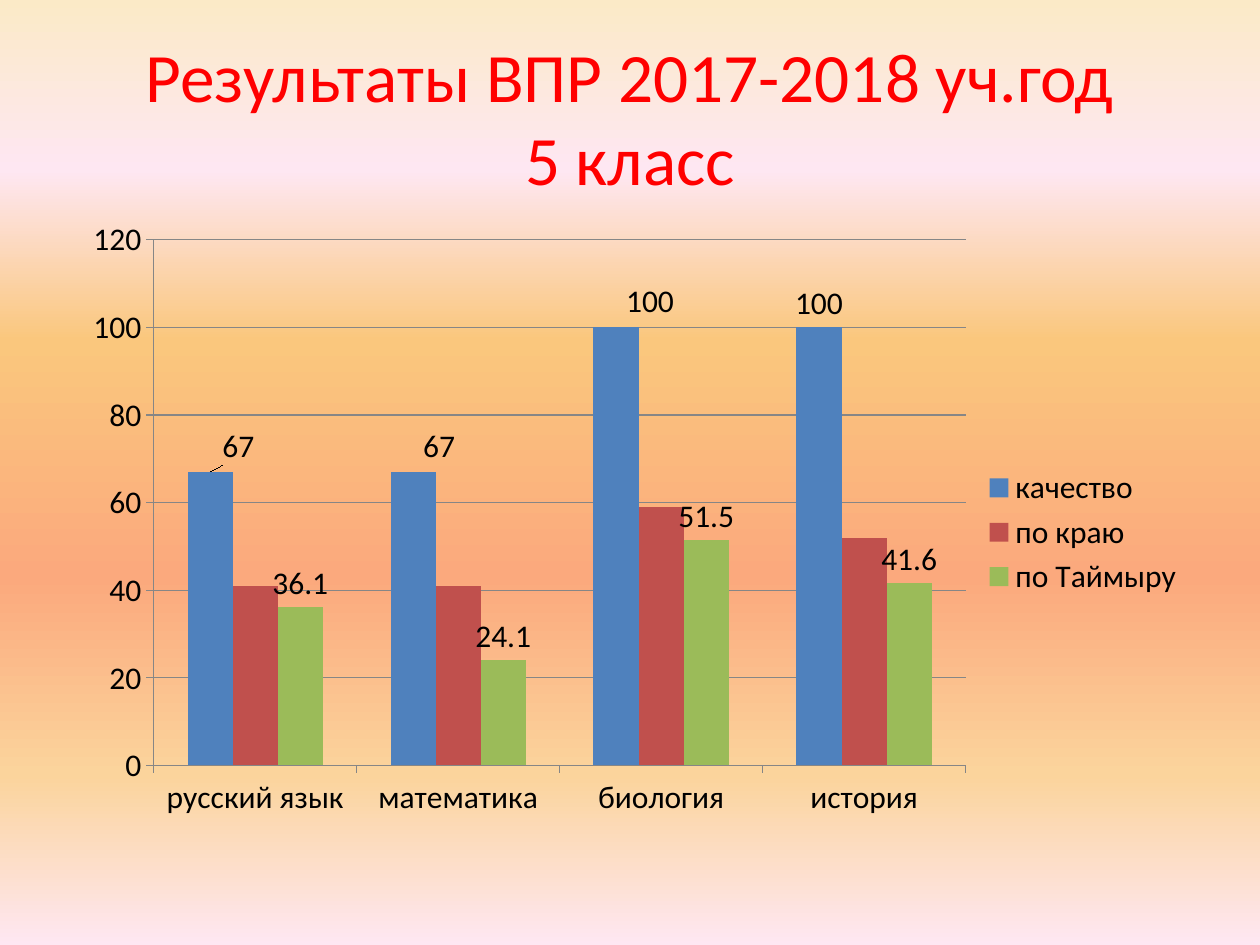
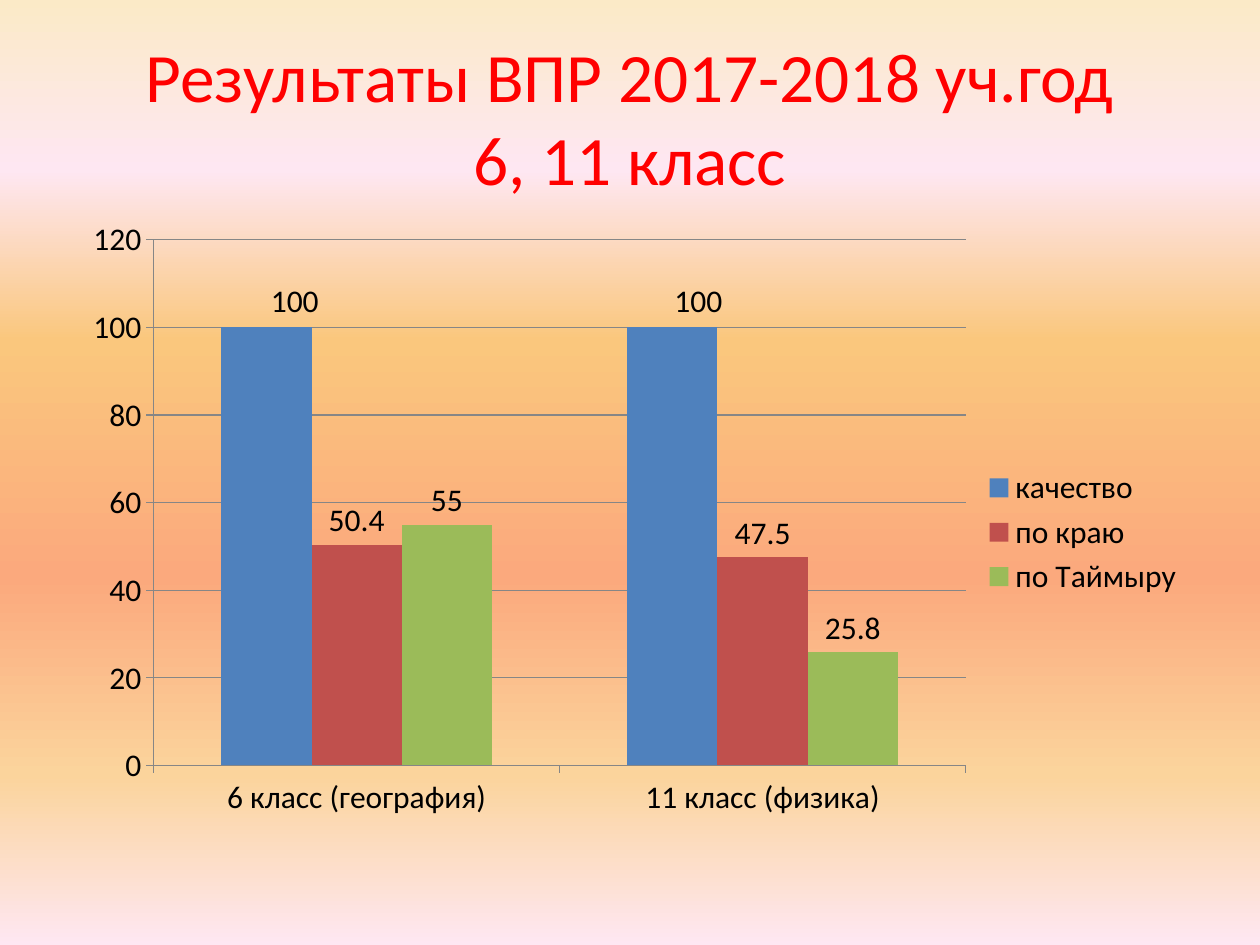
from copy import deepcopy

from lxml.etree import SubElement
from pptx import Presentation
from pptx.chart.data import CategoryChartData
from pptx.dml.color import RGBColor
from pptx.enum.chart import XL_CHART_TYPE as ChartType
from pptx.enum.chart import XL_LABEL_POSITION as LabelPos
from pptx.enum.chart import XL_LEGEND_POSITION as LegendPos
from pptx.enum.chart import XL_TICK_MARK as TickMark
from pptx.enum.text import MSO_ANCHOR, PP_ALIGN
from pptx.oxml.ns import qn
from pptx.util import Inches, Pt

FONT = "Calibri"
COLORS = {
    "title": "FF0000",
    "text": "000000",
    "line": "868686",
    "качество": "4F81BD",
    "по краю": "C0504D",
    "по Таймыру": "9BBB59",
}
SKY = [(0, "FBEAC7"), (18, "FEE7F2"), (36, "FAC77D"),
       (61, "FBA97D"), (82, "FBD49C"), (100, "FEE7F2")]
WIDTH, HEIGHT = Inches(10), Inches(7.5)
TITLE_BOX = (0.05, 0.04, 0.9, 1 / 6)
CHART_BOX = (0.05, 0.7 / 3, 0.9, 0.66)
PLOT_AREA = {"x": 0.08, "y": 0.031, "w": 0.716, "h": 0.843}
LABEL_LIFT = -0.003


def rgb(name):
    return RGBColor.from_string(COLORS[name])


def place(box):
    """Turn shares of the slide into left, top, width, height."""
    return [round(share * side) for share, side in zip(box, (WIDTH, HEIGHT) * 2)]


def set_background(master):
    fill = master.background.fill
    fill.gradient()
    fill.gradient_angle = 270
    stops = master.element.find(".//" + qn("a:gsLst"))
    for _ in range(len(SKY) - len(stops)):
        stops.append(deepcopy(stops[0]))
    for stop, (percent, color) in zip(fill.gradient_stops, SKY):
        stop.position = percent / 100
        stop.color.rgb = RGBColor.from_string(color)


def add_title(s, lines):
    title = s.shapes.title
    title.left, title.top, title.width, title.height = place(TITLE_BOX)
    tf = title.text_frame
    tf.vertical_anchor = MSO_ANCHOR.MIDDLE
    p = tf.paragraphs[0]
    p.alignment = PP_ALIGN.CENTER
    for i, line in enumerate(lines):
        if i:
            p.add_line_break()
        r = p.add_run()
        r.text = line
        r.font.name, r.font.size = FONT, Pt(39.6)
        r.font.color.rgb = rgb("title")


def fill_layout(layout, **settings):
    """Write a manual chart layout: one child element per setting."""
    manual = SubElement(layout, qn("c:manualLayout"))
    for tag, value in settings.items():
        SubElement(manual, qn("c:" + tag)).set("val", str(value))


def fix_plot_area(chart):
    area = chart.element.find(".//" + qn("c:plotArea"))
    layout = area.find(qn("c:layout"))
    if layout is None:
        layout = SubElement(area, qn("c:layout"))
        area.insert(0, layout)
    fill_layout(layout, layoutTarget="inner", xMode="edge", yMode="edge", **PLOT_AREA)


def style_axes(chart):
    for axis in (chart.category_axis, chart.value_axis):
        axis.major_tick_mark = TickMark.OUTSIDE
        axis.minor_tick_mark = TickMark.NONE
        axis.format.line.color.rgb = rgb("line")
        axis.format.line.width = Pt(0.75)
    axis = chart.value_axis
    axis.minimum_scale, axis.maximum_scale, axis.major_unit = 0, 120, 20
    axis.has_major_gridlines = True
    grid = axis.major_gridlines.format.line
    grid.color.rgb, grid.width = rgb("line"), Pt(0.75)


def set_font(font):
    font.name, font.size = FONT, Pt(18)
    font.color.rgb = rgb("text")


def show_values(series):
    labels = series.data_labels
    labels.show_value = True
    labels.position = LabelPos.OUTSIDE_END
    set_font(labels.font)


def shift_labels(series, shifts):
    """Move the first value labels sideways by shares of the chart width."""
    for i, shift in enumerate(shifts):
        label = series.points[i].data_label
        label.position = LabelPos.OUTSIDE_END
        set_font(label.font)
    for node, shift in zip(series._element.iter(qn("c:dLbl")), shifts):
        layout = SubElement(node, qn("c:layout"))
        node.insert(1, layout)
        fill_layout(layout, x=shift, y=LABEL_LIFT)


def add_results_chart(s, subjects, results, labelled, shifts):
    data = CategoryChartData()
    data.categories = subjects
    for name, values in results.items():
        data.add_series(name, values)
    chart = s.shapes.add_chart(ChartType.COLUMN_CLUSTERED, *place(CHART_BOX), data).chart
    set_font(chart.font)
    chart.has_title = False
    chart.has_legend = True
    chart.legend.position = LegendPos.RIGHT
    chart.legend.include_in_layout = False
    fix_plot_area(chart)
    style_axes(chart)
    plot = chart.plots[0]
    plot.gap_width, plot.overlap, plot.vary_by_categories = 150, 0, False
    for series in plot.series:
        series.format.fill.solid()
        series.format.fill.fore_color.rgb = rgb(series.name)
        if series.name in labelled:
            show_values(series)
    shift_labels(plot.series[0], shifts)


def add_results_slide(prs, grade, subjects, results, labelled, shifts):
    s = prs.slides.add_slide(prs.slide_layouts.get_by_name("Title Only"))
    add_title(s, ["Результаты ВПР 2017-2018 уч.год", grade])
    add_results_chart(s, subjects, results, labelled, shifts)


def main():
    prs = Presentation()
    prs.slide_width, prs.slide_height = WIDTH, HEIGHT
    set_background(prs.slide_master)
    add_results_slide(
        prs, "5 класс",
        ["русский язык", "математика", "биология", "история"],
        {"качество": [67, 67, 100, 100],
         "по краю": [41, 41, 59, 52],
         "по Таймыру": [36.1, 24.1, 51.5, 41.6]},
        labelled=["качество", "по Таймыру"], shifts=[0.025, 0.023, 0.03])
    add_results_slide(
        prs, "6, 11 класс",
        ["6 класс (география)", "11 класс (физика)"],
        {"качество": [100, 100],
         "по краю": [50.4, 47.5],
         "по Таймыру": [55, 25.8]},
        labelled=["качество", "по краю", "по Таймыру"], shifts=[0.025, 0.023])
    prs.save("out.pptx")


if __name__ == "__main__":
    main()
